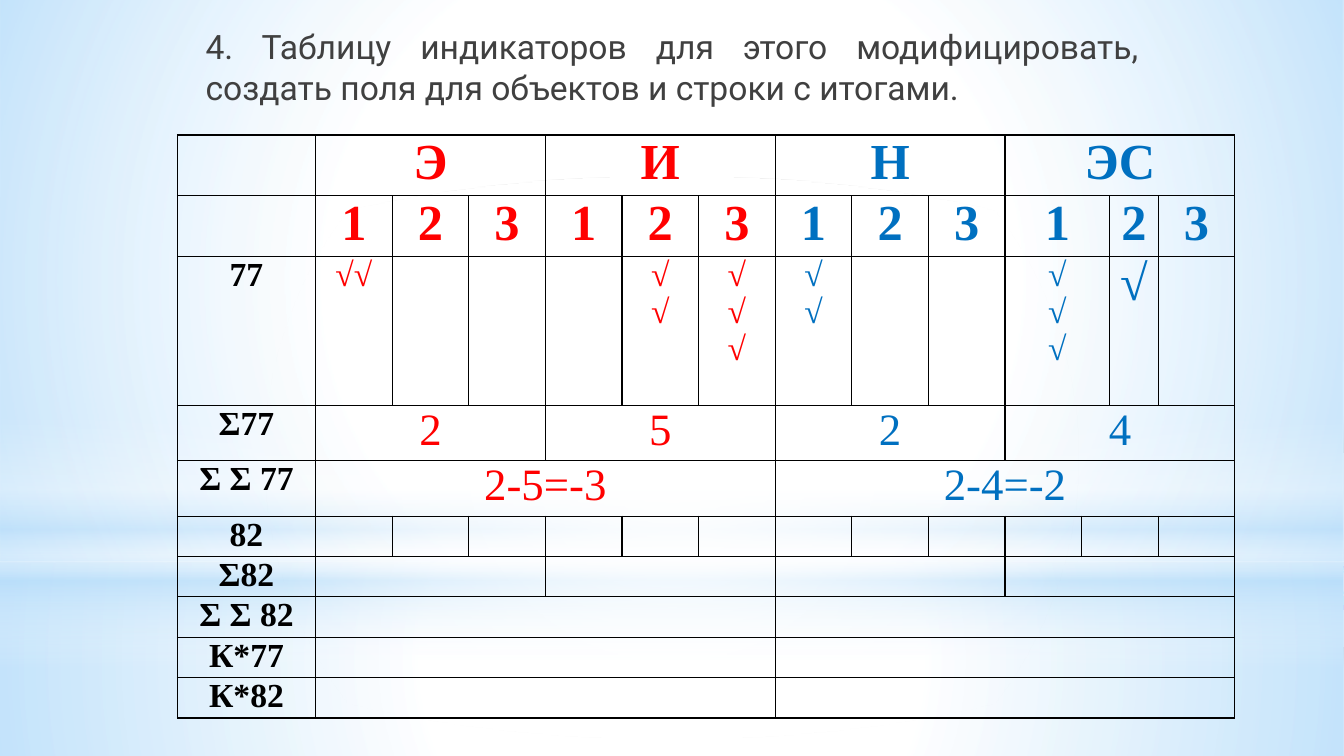
from lxml.etree import SubElement
from pptx import Presentation
from pptx.dml.color import RGBColor
from pptx.enum.shapes import MSO_SHAPE
from pptx.enum.text import PP_ALIGN
from pptx.oxml.ns import qn
from pptx.util import Inches, Pt


def rgb(value):
    return RGBColor.from_string(value)


def set_gradient(sp, stops, angle):
    sp.fill.background()
    spPr = sp.fill._xPr
    grad = SubElement(spPr, qn("a:gradFill"), rotWithShape="1")
    gs_list = SubElement(grad, qn("a:gsLst"))
    for pos, color, alpha in stops:
        gs = SubElement(gs_list, qn("a:gs"), pos=str(pos * 1000))
        clr = SubElement(gs, qn("a:srgbClr"), val=color)
        SubElement(clr, qn("a:alpha"), val=str(alpha * 1000))
    if angle is None:
        way = SubElement(grad, qn("a:path"), path="circle")
        SubElement(way, qn("a:fillToRect"), l="50000", t="50000", r="50000", b="50000")
    else:
        SubElement(grad, qn("a:lin"), ang=str(angle * 60000), scaled="0")
    spPr.replace(spPr.find(qn("a:noFill")), grad)


WHITE, SKY, RED, BLUE, BLACK = "FFFFFF", "B4DCFA", "FF0000", "0070C0", "000000"

prs = Presentation()
prs.slide_width, prs.slide_height = Inches(13.33), Inches(7.5)
s = prs.slides.add_slide(prs.slide_layouts[6])
s.background.fill.solid()
s.background.fill.fore_color.rgb = rgb(WHITE)

backdrop = [
    (MSO_SHAPE.RECTANGLE, 5.58, 1.92, [(0, WHITE, 91), (37, WHITE, 76), (100, SKY, 79)], None),
    (MSO_SHAPE.RECTANGLE, 0, 5.58, [(0, WHITE, 89), (48, WHITE, 62), (100, SKY, 79)], None),
    (MSO_SHAPE.RECTANGLE, 4.12, 2.5, [(0, WHITE, 0), (29, WHITE, 30), (45, SKY, 40),
                                      (55, WHITE, 26), (65, SKY, 60), (100, WHITE, 0)], 90),
    (MSO_SHAPE.OVAL, 1.75, 5.58, [(0, WHITE, 100), (56, WHITE, 0)], None),
]
for kind, top, height, stops, angle in backdrop:
    sp = s.shapes.add_shape(kind, 0, Inches(top), prs.slide_width, Inches(height))
    sp.shadow.inherit = False
    sp.line.fill.background()
    set_gradient(sp, stops, angle)

tf = s.shapes.add_textbox(Inches(1.94), Inches(0.21), Inches(9.45), Inches(6.27)).text_frame
tf.word_wrap = True
p = tf.paragraphs[0]
p.alignment = PP_ALIGN.JUSTIFY
r = p.add_run()
r.text = "4. Таблицу индикаторов для этого модифицировать, создать поля для объектов и строки с итогами."
r.font.name, r.font.size = "Roboto", Pt(24)
r.font.color.rgb = rgb("404040")

cols = [1.37] + [0.76] * 10 + [0.28, 0.48, 0.76]
rows = [0.55, 0.55, 1.48, 0.55, 0.55] + [0.37] * 5
tbl = s.shapes.add_table(len(rows), len(cols), Inches(1.76), Inches(1.34),
                         Inches(sum(cols)), Inches(sum(rows))).table
tbl.first_row = tbl.horz_banding = False
for col, width in zip(tbl.columns, cols):
    col.width = Inches(width)
for row, height in zip(tbl.rows, rows):
    row.height = Inches(height)

for cell in tbl.iter_cells():
    for side, value in {"left": 0.07, "top": 0, "right": 0.07, "bottom": 0}.items():
        setattr(cell, f"margin_{side}", Inches(value))
    tcPr = cell._tc.get_or_add_tcPr()
    for tag in ("a:lnL", "a:lnR", "a:lnT", "a:lnB"):
        ln = SubElement(tcPr, qn(tag), w=str(Pt(1)))
        SubElement(SubElement(ln, qn("a:solidFill")), qn("a:srgbClr"), val=BLACK)
    cell.fill.background()

groups = [0, 1, 4, 7, 10]
halves = [0, 1, 7]
objects = [*range(11), 12, 13]
totals = [*range(11), 11, 13]
content = [
    (groups, 36, ["", "Э", "И", "Н", "ЭC"]),
    (objects, 36, [""] + ["1", "2", "3"] * 4),
    (objects, 24, ["77", "√√", "", "", "", "√\n√", "√\n√\n√", "√\n√", "", "", "√\n√\n√", "√", ""]),
    (groups, 32, ["Σ77", "2", "5", "2", "4"]),
    (halves, 32, ["Σ Σ 77", "2-5=-3", "2-4=-2"]),
    (totals, 24, ["82"] + [""] * 12),
    (groups, 24, ["Σ82"] + [""] * 4),
    (halves, 24, ["Σ Σ 82", "", ""]),
    (halves, 24, ["К*77", "", ""]),
    (halves, 24, ["К*82", "", ""]),
]
for i, (starts, size, texts) in enumerate(content):
    for first, after, text in zip(starts, starts[1:] + [len(cols)], texts):
        cell = tbl.cell(i, first)
        if after - first > 1:
            cell.merge(tbl.cell(i, after - 1))
        if not text:
            continue
        cell.text = text
        large_tick = i == 2 and first == 12
        fmt = {
            "name": "Times New Roman",
            "size": Pt(24 if first == 0 else 36 if large_tick else size),
            "bold": first == 0 or i < 2,
        }
        for p in cell.text_frame.paragraphs:
            p.alignment = PP_ALIGN.CENTER
            font = p.runs[0].font
            for key, value in fmt.items():
                setattr(font, key, value)
            font.color.rgb = rgb(BLACK if first == 0 else RED if first < 7 else BLUE)

prs.save("out.pptx")
